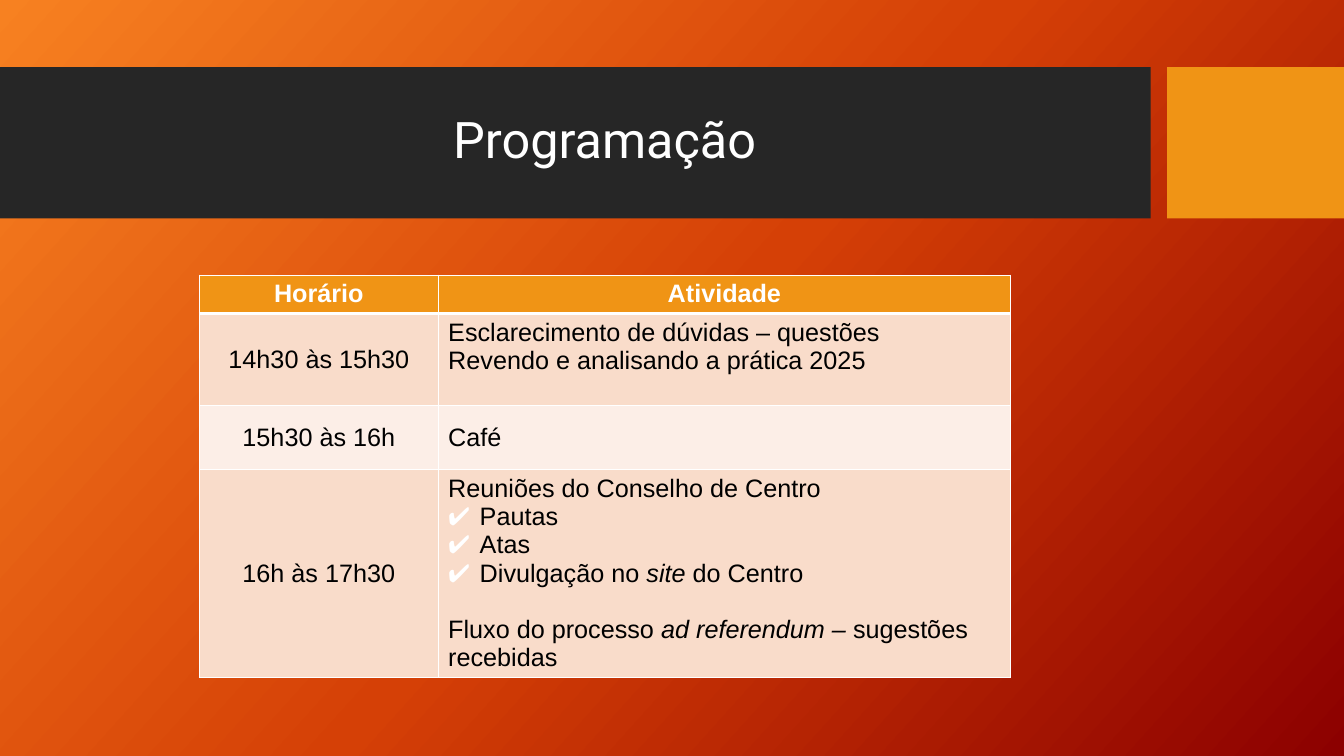
from copy import deepcopy
from lxml.etree import SubElement
from pptx import Presentation
from pptx.dml.color import RGBColor
from pptx.enum.shapes import MSO_SHAPE
from pptx.enum.text import MSO_ANCHOR as ANCHOR, MSO_AUTO_SIZE as AUTOSIZE, PP_ALIGN as ALIGN
from pptx.oxml.ns import qn
from pptx.util import Pt

COLORS = {
    "white": "FFFFFF", "black": "000000", "dark": "262626", "orange": "F09415",
    "band": "F9DCCA", "light": "FCEEE7",
    "start": "F78121", "middle": "D54006", "end": "8C0000",
}
BODY = {"name": "Arial", "size": Pt(18), "bold": False}
HEADER = {**BODY, "bold": True}
TITLE = {"name": "Roboto", "size": Pt(36), "bold": False}
INDENT, GAP = 22.5, 20.25

SCHEDULE = [
    ("14h30 às 15h30", ANCHOR.TOP, [
        ("", ["Esclarecimento de dúvidas – questões"]),
        ("", ["Revendo e analisando a prática 2025"])]),
    ("15h30 às 16h", ANCHOR.MIDDLE, [("", ["Café"])]),
    ("16h às 17h30", ANCHOR.TOP, [
        ("", ["Reuniões do Conselho de Centro"]),
        ("check", ["Pautas"]),
        ("check", ["Atas"]),
        ("check", ["Divulgação no ", "site ", "do Centro"]),
        ("gap", ["Fluxo do processo ", "ad referendum – ", "sugestões recebidas"])]),
]


def rgb(name):
    """Return the named colour."""
    return RGBColor.from_string(COLORS[name])


def set_font(font, formats, color):
    """Apply a dict of format values and a colour to a font."""
    for key, value in formats.items():
        setattr(font, key, value)
    font.color.rgb = rgb(color)


def add_background(s, names, angle):
    """Fill the slide with an evenly spaced linear gradient."""
    fill = s.background.fill
    fill.gradient()
    fill.gradient_angle = 360 - angle
    last = fill.gradient_stops[-1]._gs
    for _ in names[2:]:
        last.addnext(deepcopy(last))
    for i, (stop, name) in enumerate(zip(fill.gradient_stops, names)):
        stop.position = i / (len(names) - 1)
        stop.color.rgb = rgb(name)


def add_block(s, x, y, w, h, color):
    """Add a plain filled rectangle."""
    sp = s.shapes.add_shape(MSO_SHAPE.RECTANGLE, Pt(x), Pt(y), Pt(w), Pt(h))
    sp.shadow.inherit = False
    sp.fill.solid()
    sp.fill.fore_color.rgb = rgb(color)
    sp.line.fill.background()


def add_title_band(s, x, y, w, h, text):
    """Draw the dark band, its orange end and the title."""
    end_w, gap = 126.25, 11.75
    add_block(s, x, y, w - end_w - gap, h, "dark")
    add_block(s, x + w - end_w, y, end_w, h, "orange")
    sp = s.shapes.title
    s.shapes._spTree.append(sp._element)
    box = {"left": x + 53.5, "top": y + 10.8, "width": 757, "height": 85}
    for key, value in box.items():
        setattr(sp, key, Pt(value))
    tf = sp.text_frame
    tf.text = text
    tf.auto_size = AUTOSIZE.NONE
    tf.vertical_anchor = ANCHOR.MIDDLE
    p = tf.paragraphs[0]
    p.alignment, p.line_spacing = ALIGN.CENTER, 0.9
    set_font(p.runs[0].font, TITLE, "white")


def add_check(p):
    """Give a paragraph a white check mark and a hanging indent."""
    pPr = p._p.get_or_add_pPr()
    pPr.set("marL", str(Pt(INDENT)))
    pPr.set("indent", str(-Pt(INDENT)))
    color = SubElement(pPr, qn("a:buClr"))
    SubElement(color, qn("a:srgbClr"), val=COLORS["white"])
    SubElement(pPr, qn("a:buFont"), typeface="Arial")
    SubElement(pPr, qn("a:buChar"), char="✔")


def add_borders(cell, top, bottom):
    """Draw white cell borders with the given top and bottom widths."""
    tcPr = cell._tc.get_or_add_tcPr()
    for side, width in (("L", 1), ("R", 1), ("T", top), ("B", bottom)):
        ln = SubElement(tcPr, qn(f"a:ln{side}"), w=str(Pt(width)))
        fill = SubElement(ln, qn("a:solidFill"))
        SubElement(fill, qn("a:srgbClr"), val=COLORS["white"])


def fill_cell(cell, lines, fill, formats, color, align, anchor):
    """Write lines into a cell, every second run of a line in italics."""
    cell.fill.solid()
    cell.fill.fore_color.rgb = rgb(fill)
    cell.vertical_anchor = anchor
    tf = cell.text_frame
    for i, (kind, parts) in enumerate(lines):
        p = tf.add_paragraph() if i else tf.paragraphs[0]
        p.alignment = align
        if kind == "check":
            add_check(p)
        elif kind == "gap":
            p.space_before = Pt(GAP)
        for j, part in enumerate(parts):
            r = p.add_run()
            r.text = part
            set_font(r.font, {**formats, "italic": j % 2 == 1}, color)


def add_schedule(s, x, y, widths, heights):
    """Add the table of times and activities."""
    shape = s.shapes.add_table(len(heights), len(widths), Pt(x), Pt(y),
                               Pt(sum(widths)), Pt(sum(heights)))
    table = shape.table
    for column, width in zip(table.columns, widths):
        column.width = Pt(width)
    for i, (row, height) in enumerate(zip(table.rows, heights)):
        row.height = Pt(height)
        for cell in row.cells:
            add_borders(cell, 3 if i == 1 else 1, 3 if i == 0 else 1)
    for col, text in enumerate(("Horário", "Atividade")):
        fill_cell(table.cell(0, col), [("", [text])], "orange", HEADER, "white",
                  ALIGN.CENTER, ANCHOR.TOP)
    for row, (time, anchor, lines) in enumerate(SCHEDULE, 1):
        fill = "band" if row % 2 else "light"
        fill_cell(table.cell(row, 0), [("", [time])], fill, BODY, "black",
                  ALIGN.CENTER, ANCHOR.MIDDLE)
        fill_cell(table.cell(row, 1), lines, fill, BODY, "black", ALIGN.LEFT, anchor)


def main():
    """Build and save the slide."""
    prs = Presentation()
    prs.slide_width, prs.slide_height = Pt(960), Pt(540)
    s = prs.slides.add_slide(prs.slide_layouts[5])
    add_background(s, ("start", "middle", "end"), 42)
    add_title_band(s, 0, 48, 960, 108, "Programação")
    add_schedule(s, 142.5, 196.5, (170.5, 409), (27.5, 65.5, 46, 148))
    prs.save("out.pptx")


if __name__ == "__main__":
    main()
